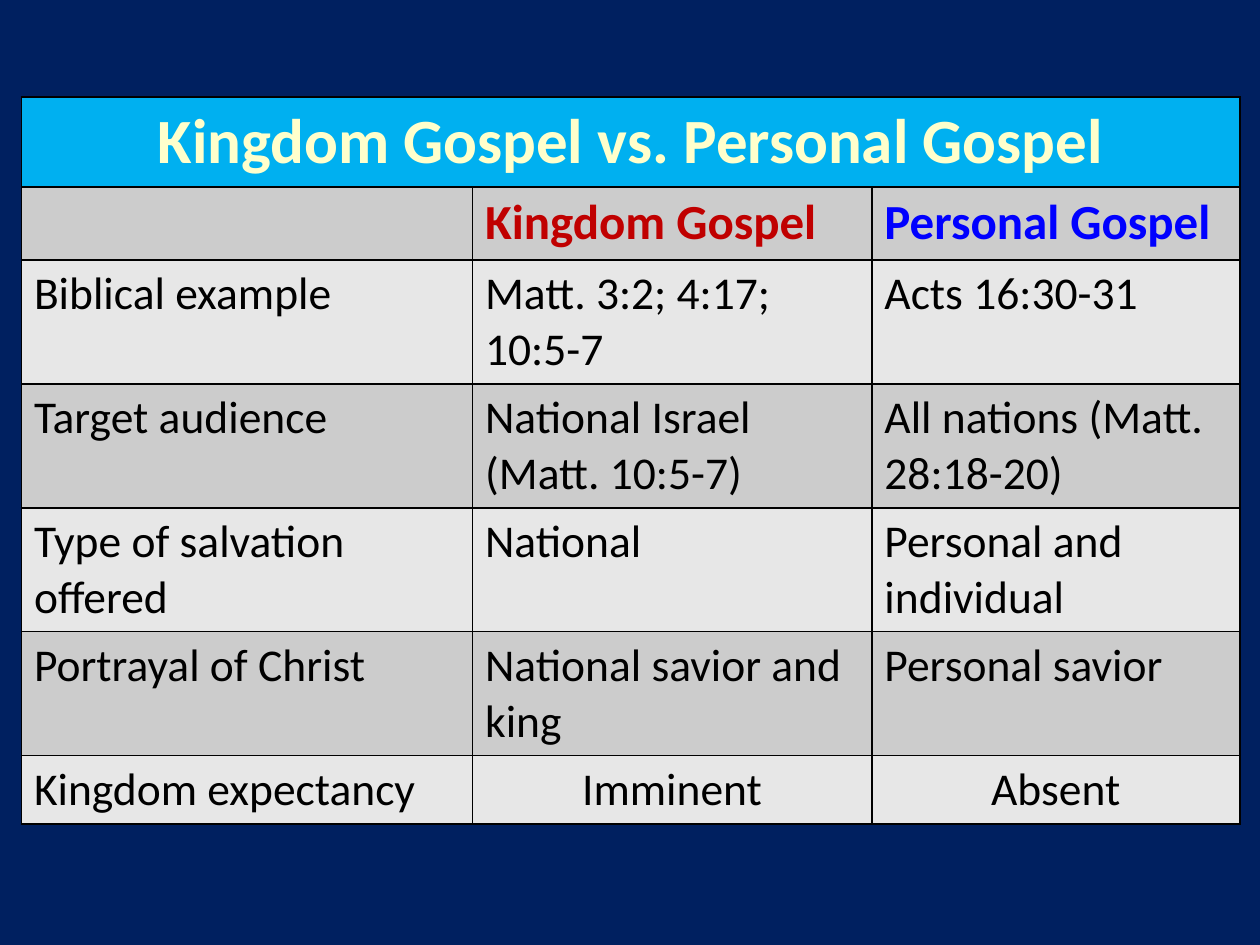
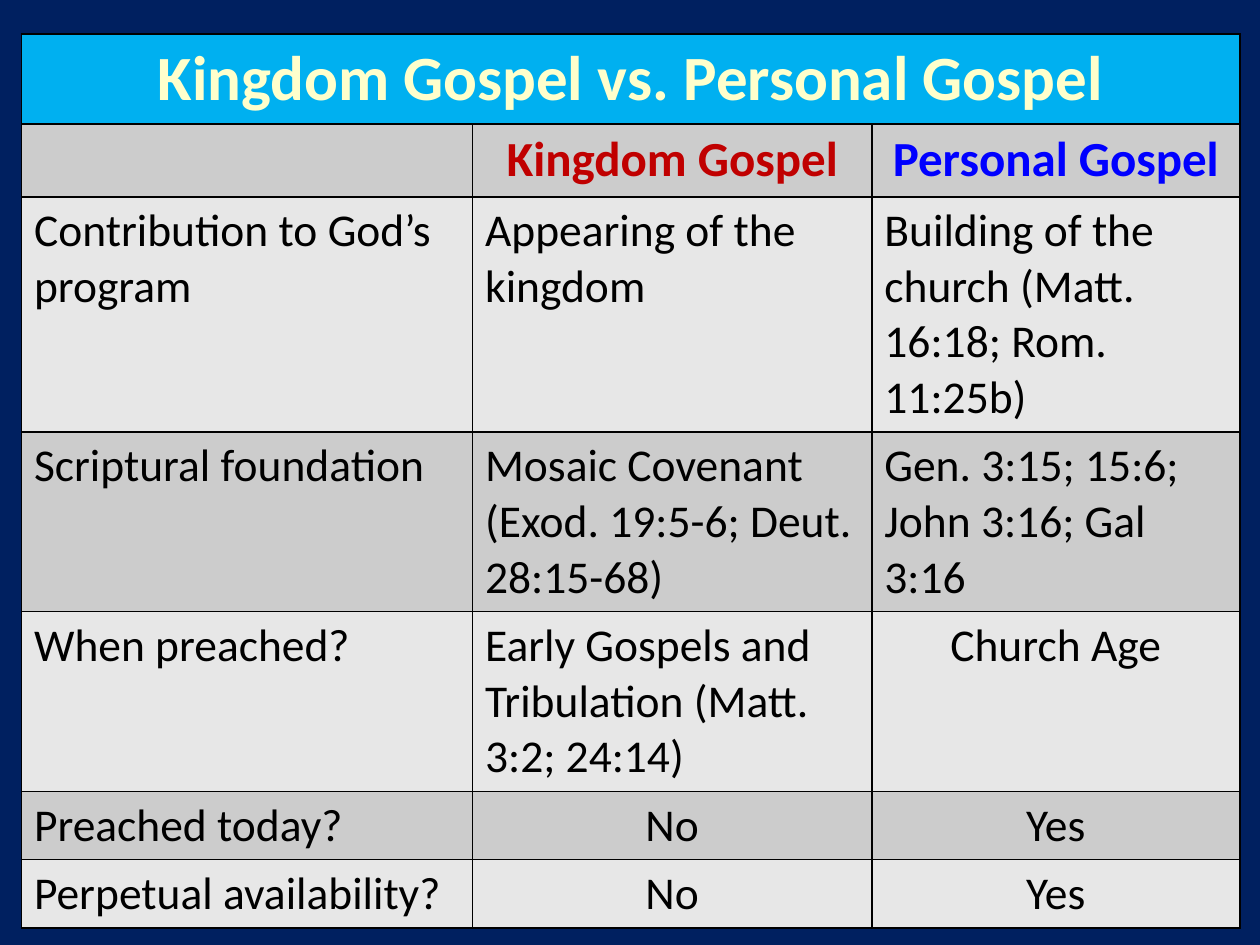
from lxml import etree
from pptx import Presentation
from pptx.dml.color import RGBColor
from pptx.enum.text import PP_ALIGN
from pptx.oxml.ns import qn
from pptx.util import Inches, Pt

COLORS = {
    "background": "002060",
    "title_fill": "00B0F0",
    "title_text": "FFFFCC",
    "dark_row": "CCCCCC",
    "light_row": "E7E7E7",
    "kingdom": "C00000",
    "personal": "0000FF",
    "text": "000000",
    "border": "000000",
}
FONT = "Calibri"
TITLE = "Kingdom Gospel vs. Personal Gospel"
HEADINGS = [("", "text"), ("Kingdom Gospel", "kingdom"), ("Personal Gospel", "personal")]
COLUMN_WIDTHS = [3.58, 3.17, 2.92]
TABLE_LEFT = 0.17
TITLE_HEIGHT, HEADING_HEIGHT = 0.71, 0.58
LINE_HEIGHT, CELL_PADDING = 0.44, 0.1
CENTERED_ANSWERS = {"Imminent", "Absent", "Church Age", "No", "Yes"}

# Each row: number of text lines, then topic, kingdom gospel, personal gospel
SLIDES = [
    {"top": 0.77, "heading_align": PP_ALIGN.LEFT, "rows": [
        (2, "Biblical example", "Matt. 3:2; 4:17; 10:5-7", "Acts 16:30-31"),
        (2, "Target audience", "National Israel (Matt. 10:5-7)",
         "All nations (Matt. 28:18-20)"),
        (2, "Type of salvation offered", "National", "Personal and individual"),
        (2, "Portrayal of Christ", "National savior and king", "Personal savior"),
        (1, "Kingdom expectancy", "Imminent", "Absent"),
    ]},
    {"top": 0.27, "heading_align": PP_ALIGN.CENTER, "rows": [
        (4, "Contribution to God’s program", "Appearing of the kingdom",
         "Building of the church (Matt. 16:18; Rom. 11:25b)"),
        (3, "Scriptural foundation", "Mosaic Covenant\n(Exod. 19:5-6; Deut. 28:15-68)",
         "Gen. 3:15; 15:6; John 3:16; Gal 3:16"),
        (3, "When preached?", "Early Gospels and Tribulation (Matt. 3:2; 24:14)",
         "Church Age"),
        (1, "Preached today?", "No", "Yes"),
        (1, "Perpetual availability?", "No", "Yes"),
    ]},
]


def style_cell(cell, fill):
    """Outline the cell in black and give it a solid fill."""
    properties = cell._tc.get_or_add_tcPr()
    for side in ("a:lnL", "a:lnR", "a:lnT", "a:lnB"):
        line = etree.SubElement(properties, qn(side), w=str(Pt(1)))
        solid = etree.SubElement(line, qn("a:solidFill"))
        etree.SubElement(solid, qn("a:srgbClr"), val=COLORS["border"])
    cell.fill.solid()
    cell.fill.fore_color.rgb = RGBColor.from_string(COLORS[fill])


def write_cell(cell, text, size, color, bold=False, align=PP_ALIGN.LEFT):
    """Write one paragraph per line of text."""
    for index, line in enumerate(text.split("\n")):
        frame = cell.text_frame
        paragraph = frame.add_paragraph() if index else frame.paragraphs[0]
        paragraph.alignment = align
        if not line:
            continue
        run = paragraph.add_run()
        run.text = line
        run.font.name = FONT
        run.font.size = Pt(size)
        run.font.bold = bold
        run.font.color.rgb = RGBColor.from_string(COLORS[color])


presentation = Presentation()
presentation.slide_width = Inches(10)
presentation.slide_height = Inches(7.5)

for content in SLIDES:
    # Slide and background
    slide = presentation.slides.add_slide(presentation.slide_layouts[6])
    slide.background.fill.solid()
    slide.background.fill.fore_color.rgb = RGBColor.from_string(COLORS["background"])

    # Table grid
    row_heights = [TITLE_HEIGHT, HEADING_HEIGHT]
    row_heights += [CELL_PADDING + LINE_HEIGHT * row[0] for row in content["rows"]]
    table = slide.shapes.add_table(
        len(row_heights), len(COLUMN_WIDTHS), Inches(TABLE_LEFT), Inches(content["top"]),
        Inches(sum(COLUMN_WIDTHS)), Inches(sum(row_heights))).table
    for column, width in zip(table.columns, COLUMN_WIDTHS):
        column.width = Inches(width)
    for index, (row, height) in enumerate(zip(table.rows, row_heights)):
        row.height = Inches(height)
        fill = "dark_row" if index % 2 else "light_row"
        for cell in row.cells:
            style_cell(cell, fill if index else "title_fill")

    # Title across all columns
    table.cell(0, 0).merge(table.cell(0, len(COLUMN_WIDTHS) - 1))
    write_cell(table.cell(0, 0), TITLE, 36, "title_text", True, PP_ALIGN.CENTER)

    # Column headings
    for column_index, (heading, color) in enumerate(HEADINGS):
        write_cell(table.cell(1, column_index), heading, 28, color, True,
                   content["heading_align"])

    # Comparison rows
    for row_index, (_, *texts) in enumerate(content["rows"], start=2):
        for column_index, text in enumerate(texts):
            align = PP_ALIGN.CENTER if text in CENTERED_ANSWERS else PP_ALIGN.LEFT
            write_cell(table.cell(row_index, column_index), text, 26, "text", align=align)

presentation.save("out.pptx")
